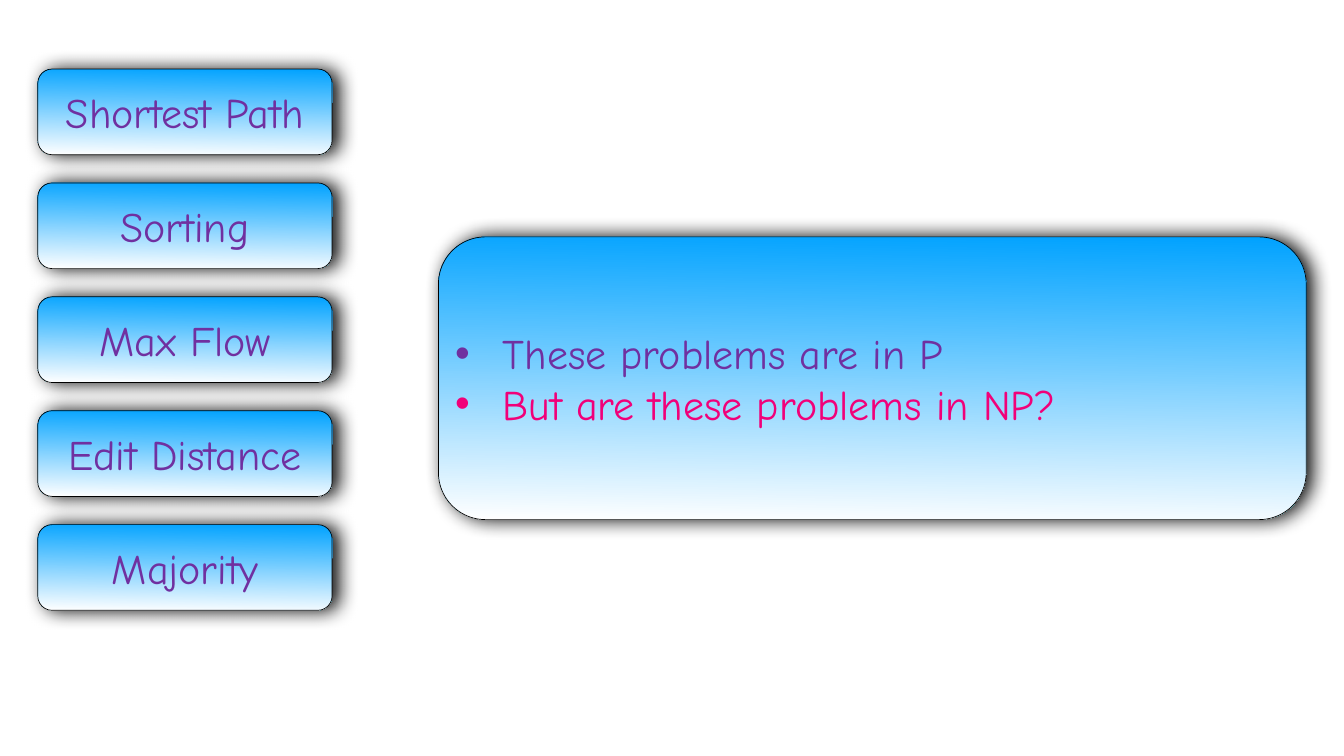
from dataclasses import dataclass

from lxml.etree import SubElement
from pptx import Presentation
from pptx.dml.color import RGBColor as Rgb
from pptx.enum.shapes import MSO_SHAPE as Shape
from pptx.enum.text import MSO_ANCHOR as Anchor, PP_ALIGN as Align
from pptx.oxml.ns import qn
from pptx.util import Inches, Pt


@dataclass(frozen=True)
class Theme:
    font: str = "Comic Neue"
    size: int = 60
    top: str = "00A2FF"
    base: str = "FFFFFF"
    edge: str = "000000"
    text: str = "7030A0"
    accent: str = "F10079"


theme = Theme()


def add_card(slide, left, top, width, height):
    """Add a rounded box with a gradient fill and a soft shadow."""
    card = slide.shapes.add_shape(
        Shape.ROUNDED_RECTANGLE, *map(Inches, (left, top, width, height)))
    card.fill.gradient()
    card.fill.gradient_angle = 269  # counter-clockwise: runs downwards
    for stop, color in zip(card.fill.gradient_stops, (theme.top, theme.base)):
        stop.color.rgb = Rgb.from_string(color)
    card.line.color.rgb = Rgb.from_string(theme.edge)
    card.line.width = Pt(1)

    card.shadow.inherit = False
    effects = card._element.spPr.find(qn("a:effectLst"))
    shadow = SubElement(effects, qn("a:outerShdw"), blurRad=str(Pt(28)),
                        dist=str(Pt(9)), dir="0", rotWithShape="0")
    color = SubElement(shadow, qn("a:srgbClr"), val=theme.edge)
    SubElement(color, qn("a:alpha"), val="97000")

    frame = card.text_frame
    frame.word_wrap = True
    frame.vertical_anchor = Anchor.MIDDLE
    frame.margin_left = frame.margin_right = Inches(0.06)
    frame.margin_top = frame.margin_bottom = Inches(0.06)
    return frame


def write(para, text, color, align):
    para.text = text
    para.alignment = align
    para.font.name = theme.font
    para.font.size = Pt(theme.size)
    para.font.color.rgb = Rgb.from_string(color)


deck = Presentation()
deck.slide_width = Inches(26.67)
deck.slide_height = Inches(15)
slide = deck.slides.add_slide(deck.slide_layouts[6])

# Problems, stacked at an equal pitch
problems = ["Shortest Path", "Sorting", "Max Flow", "Edit Distance", "Majority"]
for row, name in enumerate(problems):
    frame = add_card(slide, 0.75, 1.37 + 2.26 * row, 5.84, 1.7)
    write(frame.paragraphs[0], name, theme.text, Align.CENTER)

# Question panel
frame = add_card(slide, 8.7, 4.7, 17.22, 5.61)
points = [("These problems are in P", theme.text),
          ("But are these problems in NP?", theme.accent)]
for i, (text, color) in enumerate(points):
    para = frame.add_paragraph() if i else frame.paragraphs[0]
    props = para._p.get_or_add_pPr()
    props.set("marL", str(Inches(0.94)))
    props.set("indent", str(Inches(-0.94)))
    SubElement(props, qn("a:buFont"), typeface="Arial")
    SubElement(props, qn("a:buChar"), char="•")
    write(para, text, color, Align.LEFT)

deck.save("out.pptx")
